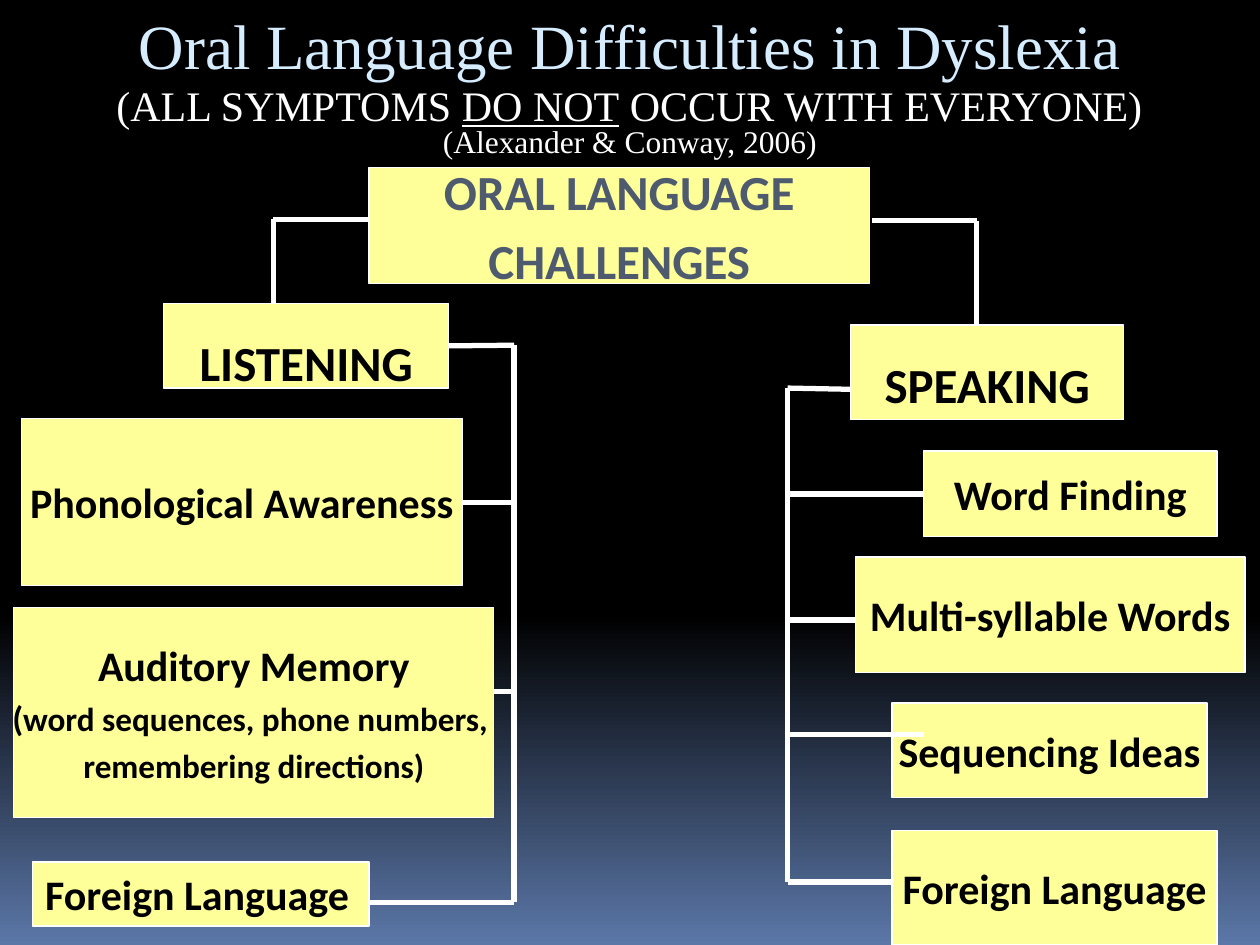
import copy

import pptx
import pptx.dml.color
import pptx.enum.dml
import pptx.enum.shapes
import pptx.enum.text
import pptx.oxml
import pptx.oxml.ns
import pptx.util
from pptx.util import Inches

COLOURS = {
    "black": "000000",
    "horizon": "5B77A8",
    "title": "D6ECFF",
    "white": "FFFFFF",
    "box": "FFFF99",
    "heading": "4E5B6F",
}
SERIF = "Times New Roman"
SANS = "Calibri"
ALIGN = pptx.enum.text.PP_ALIGN
ANCHOR = pptx.enum.text.MSO_ANCHOR
GROW = pptx.enum.text.MSO_AUTO_SIZE.SHAPE_TO_FIT_TEXT
TOP, LEFT, BOTTOM, RIGHT = range(4)

LISTENING_X = 4.08
SPEAKING_X = 6.25
LOW_TEXT = {"margin_top": Inches(0.3)}

BOXES = {
    "root": ((2.93, 1.33, 3.97, 0.92),
             [[("ORAL LANGUAGE", 28)], [("CHALLENGES", 28)]], {}, "heading"),
    "listening": ((1.3, 2.41, 2.26, 0.67), [[("LISTENING", 28)]], LOW_TEXT, "black"),
    "memory": ((0.11, 4.82, 3.81, 1.67),
               [[("Auditory Memory", 24)],
                [("(", 20), ("word sequences, phone numbers, ", 19)],
                [("remembering directions)", 19)]], {}, "black"),
    "awareness": ((0.17, 3.32, 3.5, 1.33), [[("Phonological Awareness", 24)]], {}, "black"),
    "speaking": ((6.75, 2.58, 2.17, 0.75), [[("SPEAKING", 28)]],
                 {**LOW_TEXT, "vertical_anchor": ANCHOR.BOTTOM}, "black"),
    "finding": ((7.33, 3.58, 2.33, 0.68), [[("Word Finding", 24)]], {}, "black"),
    "syllables": ((6.79, 4.42, 3.09, 0.92), [[("Multi-syllable Words", 24)]], {}, "black"),
    "sequencing": ((7.08, 5.58, 2.5, 0.75), [[("Sequencing Ideas", 24)]], {}, "black"),
    "spoken_foreign": ((7.08, 6.59, 2.58, 0.91), [[("Foreign Language", 24)]], {}, "black"),
}

LINES_BEHIND = [
    (LISTENING_X, 3.99, 3.17, 3.99),
    (LISTENING_X, 5.49, 3.12, 5.49),
    (2.92, 1.74, 2.17, 1.74),
    (2.17, 1.74, 2.17, 2.41),
    (6.92, 1.75, 7.75, 1.75),
    (7.75, 1.75, 7.75, 2.67),
    (SPEAKING_X, 4.92, 7.33, 4.92),
    (SPEAKING_X, 7, 7.33, 7),
]
LINES_IN_FRONT = [
    (LISTENING_X, 2.74, LISTENING_X, 7.16),
    (LISTENING_X, 7.16, 2.92, 7.16),
    (SPEAKING_X, 3.08, 6.75, 3.09),
    (SPEAKING_X, 3.08, SPEAKING_X, 7),
    (SPEAKING_X, 5.83, 7.33, 5.83),
]


def rgb(name):
    return pptx.dml.color.RGBColor.from_string(COLOURS[name])


def apply(target, values):
    for name, value in values.items():
        setattr(target, name, value)


def write_text(shape, paragraphs, frame_format, font_format, colour, alignment=ALIGN.CENTER):
    frame = shape.text_frame
    apply(frame, frame_format)
    for index, runs in enumerate(paragraphs):
        paragraph = frame.add_paragraph() if index else frame.paragraphs[0]
        paragraph.alignment = alignment
        paragraph.space_before = pptx.util.Pt(0.2 * runs[0][1] if index else 0)
        for text, size, *underline in runs:
            run = paragraph.add_run()
            run.text = text
            apply(run.font, {"size": pptx.util.Pt(size), **font_format})
            if underline:
                run.font.underline = True
            run.font.color.rgb = rgb(colour)


def paint_background(slide):
    fill = slide.background.fill
    fill.gradient()
    stop_list = slide.element.find(".//" + pptx.oxml.ns.qn("a:gsLst"))
    stop_list.append(copy.deepcopy(stop_list[-1]))
    fill.gradient_angle = 270
    stops = [(0, "black"), (0.65, "black"), (1, "horizon")]
    for stop, (position, colour) in zip(fill.gradient_stops, stops):
        stop.position = position
        stop.color.rgb = rgb(colour)


def add_heading(slide, bounds, runs, colour, shape=None):
    lengths = [Inches(value) for value in bounds]
    if shape is None:
        shape = slide.shapes.add_textbox(*lengths)
    apply(shape, dict(zip(("left", "top", "width", "height"), lengths)))
    frame_format = {"word_wrap": True, "auto_size": GROW, "vertical_anchor": ANCHOR.TOP}
    write_text(shape, [runs], frame_format, {"name": SERIF}, colour)


def add_box(slide, bounds, paragraphs, frame_format, colour="black", alignment=ALIGN.CENTER):
    shape = slide.shapes.add_shape(
        pptx.enum.shapes.MSO_SHAPE.RECTANGLE, *[Inches(value) for value in bounds])
    shape.shadow.inherit = False
    shape.fill.solid()
    shape.fill.fore_color.rgb = rgb("box")
    shape.line.color.rgb = rgb("white")
    shape.line.width = pptx.util.Pt(0.75)
    frame_format = {"word_wrap": False, "vertical_anchor": ANCHOR.MIDDLE, **frame_format}
    write_text(shape, paragraphs, frame_format, {"name": SANS, "bold": True}, colour, alignment)
    return shape


def add_line(slide, points):
    line = slide.shapes.add_connector(
        pptx.enum.shapes.MSO_CONNECTOR.STRAIGHT, *[Inches(value) for value in points])
    line.line.color.rgb = rgb("white")
    line.line.width = pptx.util.Pt(3)
    pptx.oxml.ns.qn("a:effectLst")
    line.element.spPr.append(
        line.element.makeelement(pptx.oxml.ns.qn("a:effectLst"), {}))
    return line


def main():
    presentation = pptx.Presentation()
    presentation.slide_width = Inches(10)
    presentation.slide_height = Inches(7.5)
    slide = presentation.slides.add_slide(presentation.slide_layouts[5])
    paint_background(slide)

    add_heading(slide, (0, 0, 10, 0.7), [("Oral Language Difficulties in Dyslexia", 36)],
                "title", slide.shapes.title)
    add_heading(slide, (0.59, 0.58, 8.81, 0.5),
                [("(ALL SYMPTOMS ", 24), ("DO NOT", 24, True),
                 (" OCCUR WITH EVERYONE)", 24)], "white")
    add_heading(slide, (0, 0.92, 10, 0.4), [("(Alexander & Conway, 2006)", 18)], "white")

    for points in LINES_BEHIND:
        add_line(slide, points)
    boxes = {name: add_box(slide, *values) for name, values in BOXES.items()}
    add_box(slide, (0.26, 6.84, 2.67, 0.51), [[("Foreign Language", 24)]],
            {"word_wrap": True, "auto_size": GROW, "vertical_anchor": ANCHOR.TOP},
            alignment=ALIGN.LEFT)
    for points in LINES_IN_FRONT:
        add_line(slide, points)
    add_line(slide, (3.56, 2.74, LISTENING_X, 2.74)).begin_connect(boxes["listening"], RIGHT)
    add_line(slide, (SPEAKING_X, 3.92, 7.33, 3.92)).end_connect(boxes["finding"], LEFT)

    presentation.save("out.pptx")


if __name__ == "__main__":
    main()
